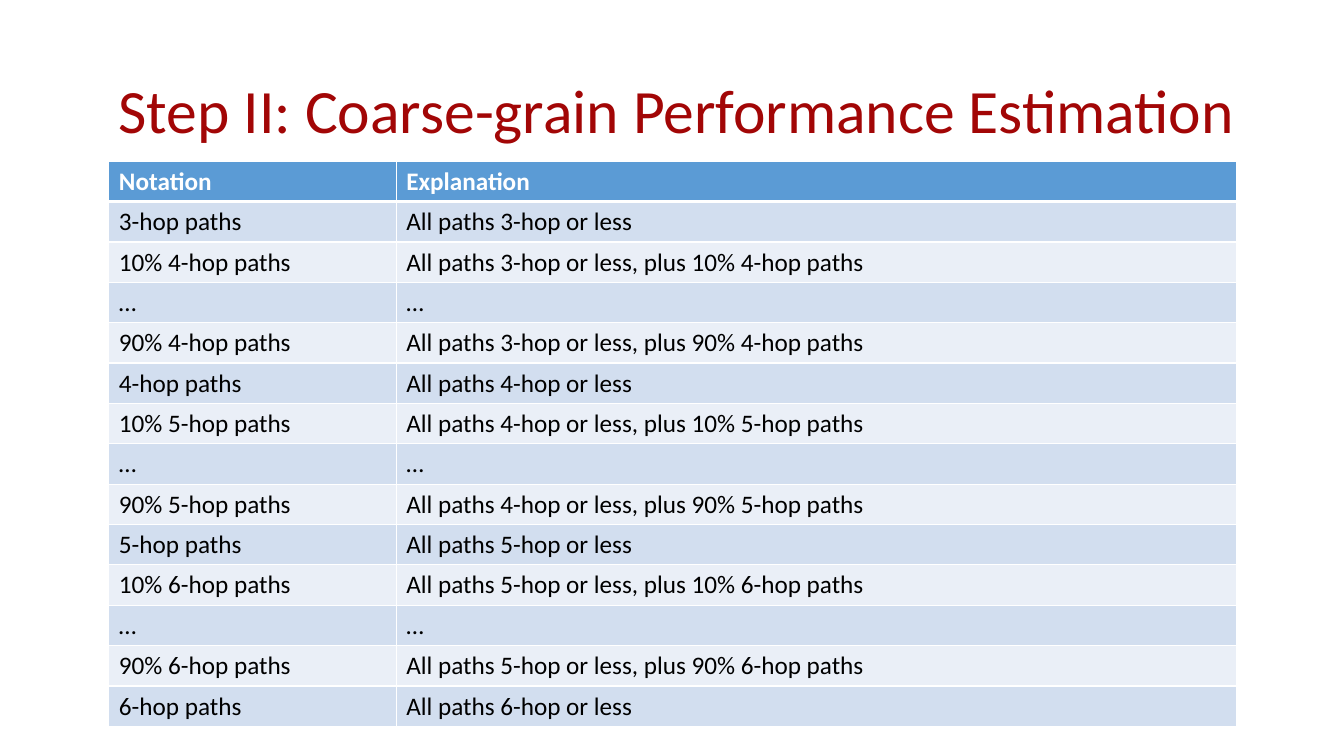
from lxml import etree
from pptx import Presentation
from pptx.dml.color import RGBColor
from pptx.enum.text import MSO_ANCHOR, PP_ALIGN
from pptx.oxml.ns import qn
from pptx.util import Inches, Pt

CENTER = PP_ALIGN.CENTER
MIDDLE = MSO_ANCHOR.MIDDLE

TITLE = "Step II: Coarse-grain Performance Estimation"
HEADER = ("Notation", "Explanation")
FIRST_HOPS, LAST_HOPS = 3, 6
SHARES = ("10%", "…", "90%")

FONT = "Calibri"
WHITE = "FFFFFF"
HEADER_FILL = "5B9BD5"
BAND_FILLS = ("D2DEEF", "EAEFF7")
TITLE_FORMAT = {"size": Pt(44), "name": FONT, "bold": False}
HEADER_FORMAT = {"size": Pt(18), "name": FONT, "bold": True}
BODY_FORMAT = {"size": Pt(18), "name": FONT, "bold": False}

TITLE_BOX = (0.27, 0.4, 12.89, 1.45)
TABLE_LEFT, TABLE_TOP = 1.08, 1.6
COLUMN_WIDTHS = (2.85, 8.33)
ROW_HEIGHT = 0.4


def color(hex_string):
    return RGBColor.from_string(hex_string)


def path_rows():
    """List each hop limit, then the shares of paths that are one hop longer."""
    rows = []
    for hops in range(FIRST_HOPS, LAST_HOPS + 1):
        base = f"All paths {hops}-hop or less"
        rows.append((f"{hops}-hop paths", base))
        if hops == LAST_HOPS:
            break
        for share in SHARES:
            longer = f"{share} {hops + 1}-hop paths"
            rows.append((share, share) if share == "…"
                        else (longer, f"{base}, plus {longer}"))
    return rows


def write(frame, text, text_color, font_format):
    para = frame.paragraphs[0]
    span = para.add_run()
    span.text = text
    for name, value in font_format.items():
        setattr(span.font, name, value)
    span.font.color.rgb = color(text_color)
    return para


def set_borders(cell, widths):
    """Draw white cell borders; widths maps side letters to points."""
    properties = cell._tc.get_or_add_tcPr()
    for side, width in widths.items():
        line = etree.SubElement(properties, qn(f"a:ln{side}"), w=str(Pt(width)))
        fill = etree.SubElement(line, qn("a:solidFill"))
        etree.SubElement(fill, qn("a:srgbClr"), val=WHITE)


def add_title(page):
    box = page.shapes.add_textbox(*map(Inches, TITLE_BOX))
    frame = box.text_frame
    frame.word_wrap = True
    frame.vertical_anchor = MIDDLE
    para = write(frame, TITLE, "A20606", TITLE_FORMAT)
    para.alignment = CENTER
    para.line_spacing = 0.9


def add_path_table(page):
    rows = [HEADER] + path_rows()
    table = page.shapes.add_table(
        len(rows), len(HEADER), Inches(TABLE_LEFT), Inches(TABLE_TOP),
        Inches(sum(COLUMN_WIDTHS)), Inches(ROW_HEIGHT * len(rows))).table
    for column, width in zip(table.columns, COLUMN_WIDTHS):
        column.width = Inches(width)
    for row_index, texts in enumerate(rows):
        table.rows[row_index].height = Inches(ROW_HEIGHT)
        is_header = row_index == 0
        fill = HEADER_FILL if is_header else BAND_FILLS[(row_index - 1) % 2]
        text_color = WHITE if is_header else "000000"
        font_format = HEADER_FORMAT if is_header else BODY_FORMAT
        widths = {"L": 1, "R": 1, "T": 3 if row_index == 1 else 1,
                  "B": 3 if is_header else 1}
        for column_index, text in enumerate(texts):
            cell = table.cell(row_index, column_index)
            set_borders(cell, widths)
            cell.fill.solid()
            cell.fill.fore_color.rgb = color(fill)
            write(cell.text_frame, text, text_color, font_format)


def main():
    deck = Presentation()
    deck.slide_width, deck.slide_height = Inches(13.33), Inches(7.5)
    page = deck.slides.add_slide(deck.slide_layouts[6])
    add_title(page)
    add_path_table(page)
    deck.save("out.pptx")


if __name__ == "__main__":
    main()
